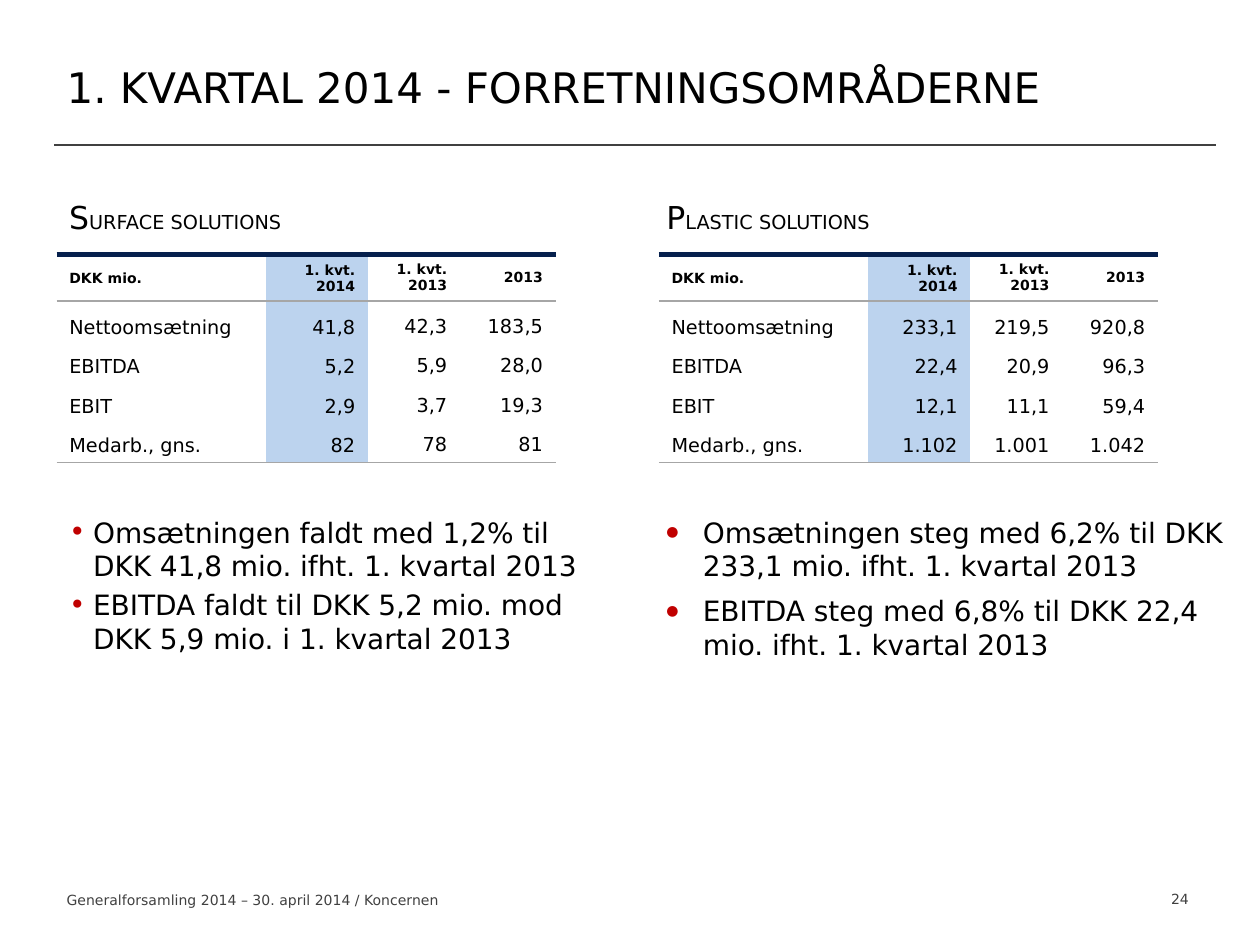
from pptx import Presentation
from pptx.dml.color import RGBColor
from pptx.enum.shapes import MSO_CONNECTOR
from pptx.enum.text import MSO_ANCHOR, PP_ALIGN
from pptx.oxml.ns import qn
from pptx.util import Inches, Pt
from lxml import etree

LINE = MSO_CONNECTOR.STRAIGHT
TOP, MID, LOW = MSO_ANCHOR.TOP, MSO_ANCHOR.MIDDLE, MSO_ANCHOR.BOTTOM
LEFT, MIDDLE, RIGHT = PP_ALIGN.LEFT, PP_ALIGN.CENTER, PP_ALIGN.RIGHT
FONT = "DejaVu Sans"
BLACK, GREY, RULE = "000000", "404040", "A6A6A6"
NAVY, BLUE, RED = "06204D", "BCD3EE", "C00000"
COLS = [1.66, 0.81, 0.73, 0.76]
ROWS = [0.37, 0.34, 0.31, 0.32, 0.31]
HEAD = ["DKK mio.", "1. kvt. 2014", "1. kvt. 2013", "2013"]
NAMES = ["Nettoomsætning", "EBITDA", "EBIT", "Medarb., gns."]


def paint(code):
    return RGBColor.from_string(code)


def node(parent, tag, **attrs):
    item = etree.SubElement(parent, qn(tag))
    for key, value in attrs.items():
        item.set(key, str(value))
    return item


def write(para, text, size=11, color=BLACK, bold=False, align=LEFT):
    para.alignment = align
    run = para.add_run()
    run.text = text
    font = run.font
    font.name, font.size, font.bold = FONT, Pt(size), bold
    font.color.rgb = paint(color)


def add_box(slide, box, anchor=TOP):
    frame = slide.shapes.add_textbox(*map(Inches, box)).text_frame
    frame.word_wrap = True
    frame.vertical_anchor = anchor
    return frame


def add_label(slide, box, text, anchor=TOP, **style):
    write(add_box(slide, box, anchor).paragraphs[0], text, **style)


def add_rule(slide, left, right, top):
    rule = slide.shapes.add_connector(
        LINE, Inches(left), Inches(top), Inches(right), Inches(top))
    rule.line.color.rgb = paint(GREY)
    rule.line.width = Pt(1.25)
    node(rule._element.spPr, "a:effectLst")


def add_heading(slide, box, text):
    """Set the text in small capitals: a large first letter, small rest."""
    para = add_box(slide, box, MID).paragraphs[0]
    write(para, text[0], size=18)
    write(para, text[1:], size=11)


def add_bullets(slide, box, lines, mark, indent, after=0, scale=100):
    frame = add_box(slide, box)
    for i, text in enumerate(lines):
        para = frame.paragraphs[0] if i == 0 else frame.add_paragraph()
        para.space_before = Pt(3.2 if i else 0)
        para.space_after = Pt(after)
        props = para._p.get_or_add_pPr()
        props.set("marL", str(Inches(indent)))
        props.set("indent", str(-Inches(indent)))
        node(node(props, "a:buClr"), "a:srgbClr", val=RED)
        node(props, "a:buSzPct", val=scale * 1000)
        node(props, "a:buFont", typeface=FONT)
        node(props, "a:buChar", char=mark)
        write(para, text, size=16)


def set_edges(cell, edges):
    """Draw the given edges, as {side: (color, points)}, and clear the rest."""
    props = cell._tc.get_or_add_tcPr()
    for i, side in enumerate("LRTB"):
        line = etree.Element(qn("a:ln" + side))
        if side in edges:
            color, width = edges[side]
            line.set("w", str(Pt(width)))
            node(node(line, "a:solidFill"), "a:srgbClr", val=color)
        else:
            node(line, "a:noFill")
        props.insert(i, line)


def add_figures(slide, left, top, values, inset):
    """Add a table; inset is the lower margin of the two last columns."""
    rows = [HEAD] + [[name] + row for name, row in zip(NAMES, values)]
    table = slide.shapes.add_table(
        len(ROWS), len(COLS), Inches(left), Inches(top),
        Inches(sum(COLS)), Inches(sum(ROWS))).table
    table.first_row = table.horz_banding = False
    for col, width in zip(table.columns, COLS):
        col.width = Inches(width)
    for row, height in zip(table.rows, ROWS):
        row.height = Inches(height)
    edges = {0: {"T": (NAVY, 3), "B": (RULE, 1)},
             1: {"T": (RULE, 1)},
             len(ROWS) - 1: {"B": (RULE, 1)}}
    for r, row in enumerate(rows):
        for c, text in enumerate(row):
            cell = table.cell(r, c)
            cell.margin_left = cell.margin_right = Inches(0.1)
            cell.margin_top = Inches(0.05)
            low = 0.04 if c < 2 else inset if r else 0.05
            cell.margin_bottom = Inches(low)
            cell.vertical_anchor = LOW if r else MID
            if c == 1:
                cell.fill.solid()
                cell.fill.fore_color.rgb = paint(BLUE)
            else:
                cell.fill.background()
            set_edges(cell, edges.get(r, {}))
            write(cell.text_frame.paragraphs[0], text, size=11 if r else 8,
                  bold=r == 0, align=RIGHT if c else LEFT)


def add_frame(slide):
    add_label(slide, (0.43, 0.22, 8.58, 0.93),
              "1. KVARTAL 2014 - FORRETNINGSOMRÅDERNE", MID, size=24)
    add_rule(slide, 0.43, 9.65, 1.15)
    add_label(slide, (0.43, 7.03, 4.02, 0.24),
              "Generalforsamling 2014 – 30. april 2014 / Koncernen",
              size=8, color=GREY)
    add_label(slide, (8.95, 7.02, 0.83, 0.23), "24",
              size=8, color=GREY, align=MIDDLE)


def add_surface(slide, left):
    add_heading(slide, (left, 1.53, 4.05, 0.39), "SURFACE SOLUTIONS")
    add_figures(slide, left, 2.02, [["41,8", "42,3", "183,5"],
                                    ["5,2", "5,9", "28,0"],
                                    ["2,9", "3,7", "19,3"],
                                    ["82", "78", "81"]], 0.05)
    add_bullets(slide, (left, 4.04, 4.49, 1.93), [
        "Omsætningen faldt med 1,2% til DKK 41,8 mio. ifht. 1. kvartal 2013",
        "EBITDA faldt til DKK 5,2 mio. mod DKK 5,9 mio. i 1. kvartal 2013",
    ], "•", 0.19)


def add_plastic(slide, left):
    add_heading(slide, (left, 1.53, 4.05, 0.39), "PLASTIC SOLUTIONS")
    add_figures(slide, left + 0.04, 2.02, [["233,1", "219,5", "920,8"],
                                           ["22,4", "20,9", "96,3"],
                                           ["12,1", "11,1", "59,4"],
                                           ["1.102", "1.001", "1.042"]], 0.04)
    add_bullets(slide, (left, 4.04, 4.67, 1.95), [
        "Omsætningen steg med 6,2% til DKK 233,1 mio. ifht. 1. kvartal 2013",
        "EBITDA steg med 6,8% til DKK 22,4 mio. ifht. 1. kvartal 2013",
    ], "●", 0.29, after=3.2, scale=50)


def main():
    deck = Presentation()
    deck.slide_width, deck.slide_height = Inches(10), Inches(7.5)
    slide = deck.slides.add_slide(deck.slide_layouts[6])
    add_frame(slide)
    add_surface(slide, 0.45)
    add_plastic(slide, 5.19)
    deck.save("out.pptx")


if __name__ == "__main__":
    main()
